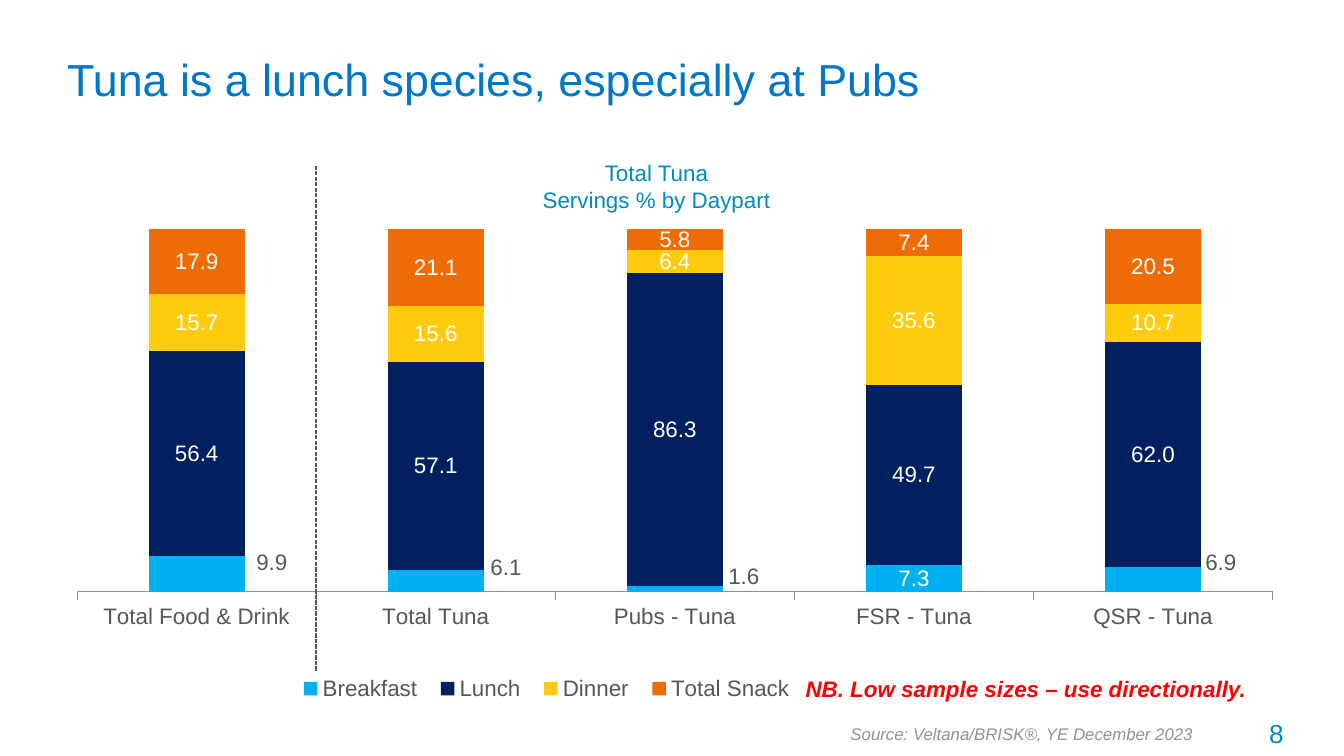
import pptx
import pptx.chart.data
import pptx.dml.color
import pptx.enum.chart
import pptx.enum.dml
import pptx.enum.shapes
import pptx.enum.text
import pptx.oxml
import pptx.oxml.ns
import pptx.util

RGBColor = pptx.dml.color.RGBColor
ALIGN = pptx.enum.text.PP_ALIGN
SLIDE_WIDTH = pptx.util.Inches(10)
SLIDE_HEIGHT = SLIDE_WIDTH * 9 // 16
FONT = "Arial"

GREY = RGBColor(0x54, 0x58, 0x5A)
SOURCE_GREY = RGBColor(0x8E, 0x93, 0x96)
WHITE = RGBColor(0xFF, 0xFF, 0xFF)
TITLE_BLUE = RGBColor(0x00, 0x77, 0xC8)
TEAL = RGBColor(0x00, 0x8A, 0xC0)
RED = RGBColor(0xFF, 0x00, 0x00)
SKY = RGBColor(0x00, 0xB0, 0xF0)
NAVY = RGBColor(0x00, 0x20, 0x60)
YELLOW = RGBColor(0xFE, 0xCC, 0x0C)
ORANGE = RGBColor(0xED, 0x6C, 0x05)

CATEGORIES = ["Total Food & Drink", "Total Tuna", "Pubs - Tuna", "FSR - Tuna", "QSR - Tuna"]
DAYPARTS = [
    ("Breakfast", [9.9, 6.1, 1.6, 7.3, 6.9], SKY),
    ("Lunch", [56.4, 57.1, 86.3, 49.7, 62.0], NAVY),
    ("Dinner", [15.7, 15.6, 6.4, 35.6, 10.7], YELLOW),
    ("Total Snack", [17.9, 21.1, 5.8, 7.4, 20.5], ORANGE),
]
LABEL_SHIFTS = {0: (6.1, -2.1), 1: (5.7, -2.4), 2: (5.6, -2.2), 4: (5.5, -3.1)}


def percent_box(left, top, width, height):
    return (round(SLIDE_WIDTH * left / 100), round(SLIDE_HEIGHT * top / 100),
            round(SLIDE_WIDTH * width / 100), round(SLIDE_HEIGHT * height / 100))


def format_font(font, size, color, bold=False, italic=False):
    font.name = FONT
    font.size = pptx.util.Pt(size)
    font.color.rgb = color
    font.bold = bold
    font.italic = italic


def write_text(shape, text, size, color, align=ALIGN.LEFT, wrap=True, **style):
    frame = shape.text_frame
    frame.text = text
    frame.word_wrap = wrap
    for paragraph in frame.paragraphs:
        paragraph.alignment = align
        for run in paragraph.runs:
            format_font(run.font, size, color, **style)


def add_text(slide, box, text, **style):
    shape = slide.shapes.add_textbox(*percent_box(*box))
    write_text(shape, text, **style)
    shape.text_frame.auto_size = pptx.enum.text.MSO_AUTO_SIZE.SHAPE_TO_FIT_TEXT


def set_layout(parent, index, modes="", **percents):
    for old in parent.findall(pptx.oxml.ns.qn("c:layout")):
        parent.remove(old)
    entries = "".join(f'<c:{name} val="{percent / 100:.3f}"/>'
                      for name, percent in percents.items())
    parent.insert(index, pptx.oxml.parse_xml(
        f'<c:layout {pptx.oxml.ns.nsdecls("c")}><c:manualLayout>{modes}{entries}'
        "</c:manualLayout></c:layout>"))


def format_series(series, color):
    series.format.fill.solid()
    series.format.fill.fore_color.rgb = color
    labels = series.data_labels
    labels.show_value = True
    labels.number_format = "#,##0.0"
    labels.number_format_is_linked = False
    format_font(labels.font, 12, WHITE)


def hide_leader_lines(labels):
    for leader in labels.findall(pptx.oxml.ns.qn("c:showLeaderLines")):
        leader.set("val", "0")
    labels.append(pptx.oxml.parse_xml(
        f'<c:extLst {pptx.oxml.ns.nsdecls("c")}>'
        '<c:ext uri="{CE6537A1-D6FC-4f65-9D91-7224C49458BB}" '
        'xmlns:c15="http://schemas.microsoft.com/office/drawing/2012/chart">'
        '<c15:showLeaderLines val="0"/></c:ext></c:extLst>'))


def move_labels(series):
    for index in LABEL_SHIFTS:
        format_font(series.points[index].data_label.font, 12, GREY)
    labels = series.data_labels._element
    for label, (x, y) in zip(labels.findall(pptx.oxml.ns.qn("c:dLbl")),
                             LABEL_SHIFTS.values()):
        set_layout(label, 1, x=x, y=y)
    hide_leader_lines(labels)


def add_daypart_chart(slide):
    data = pptx.chart.data.CategoryChartData(number_format="#,##0.0")
    data.categories = CATEGORIES
    for name, values, color in DAYPARTS:
        data.add_series(name, values)
    chart = slide.shapes.add_chart(
        pptx.enum.chart.XL_CHART_TYPE.COLUMN_STACKED_100,
        *percent_box(4, 23.9, 91.7, 70), data).chart
    format_font(chart.font, 12, GREY)
    chart.has_title = False
    plot = chart.plots[0]
    plot.gap_width = 150
    plot.overlap = 100
    plot.vary_by_categories = False
    for series, (name, values, color) in zip(plot.series, DAYPARTS):
        format_series(series, color)
    move_labels(plot.series[0])

    chart.value_axis.visible = False
    chart.value_axis.has_major_gridlines = False
    axis = chart.category_axis
    axis.major_tick_mark = pptx.enum.chart.XL_TICK_MARK.OUTSIDE
    axis.format.line.color.rgb = SOURCE_GREY
    axis.format.line.width = pptx.util.Pt(0.75)

    chart.has_legend = True
    chart.legend.position = pptx.enum.chart.XL_LEGEND_POSITION.BOTTOM
    chart.legend.include_in_layout = False
    edges = '<c:xMode val="edge"/><c:yMode val="edge"/>'
    set_layout(chart.legend._element, 1, edges, x=19, y=93, w=42, h=6)
    set_layout(chart._chartSpace.chart.plotArea, 0,
               f'<c:layoutTarget val="inner"/>{edges}', x=1.9, y=9.2, w=97, h=68.5)


def add_divider(slide):
    left, top, width, height = percent_box(23.5, 21.9, 0, 66.8)
    line = slide.shapes.add_connector(
        pptx.enum.shapes.MSO_CONNECTOR.STRAIGHT, left, top + height, left, top)
    line.line.color.rgb = GREY
    line.line.width = pptx.util.Pt(0.75)
    line.line.dash_style = pptx.enum.dml.MSO_LINE.SQUARE_DOT
    line._element.spPr.append(pptx.oxml.parse_xml(
        f'<a:effectLst {pptx.oxml.ns.nsdecls("a")}/>'))


def add_title(slide, text):
    title = slide.shapes.title
    title.left, title.top, title.width, title.height = percent_box(4, 4.1, 89.8, 12.6)
    write_text(title, text, size=24, color=TITLE_BLUE)
    title.text_frame.vertical_anchor = pptx.enum.text.MSO_ANCHOR.MIDDLE


def main():
    presentation = pptx.Presentation()
    presentation.slide_width = SLIDE_WIDTH
    presentation.slide_height = SLIDE_HEIGHT
    slide = presentation.slides.add_slide(presentation.slide_layouts[5])
    add_title(slide, "Tuna is a lunch species, especially at Pubs")
    add_daypart_chart(slide)
    add_text(slide, (39.3, 20.2, 19.1, 8.9), "Total Tuna\nServings % by Daypart",
             size=12, color=TEAL, align=ALIGN.CENTER, wrap=False)
    add_divider(slide)
    add_text(slide, (88.5, 94, 8, 6), "8",
             size=14, color=TEAL, align=ALIGN.RIGHT)
    add_text(slide, (57, 88.4, 38.7, 5.3), "NB. Low sample sizes – use directionally.",
             size=12, color=RED, align=ALIGN.CENTER, bold=True, italic=True)
    add_text(slide, (62.3, 94.8, 29, 4.4), "Source: Veltana/BRISK®, YE December 2023",
             size=9, color=SOURCE_GREY, wrap=False, italic=True)
    presentation.save("out.pptx")


if __name__ == "__main__":
    main()
